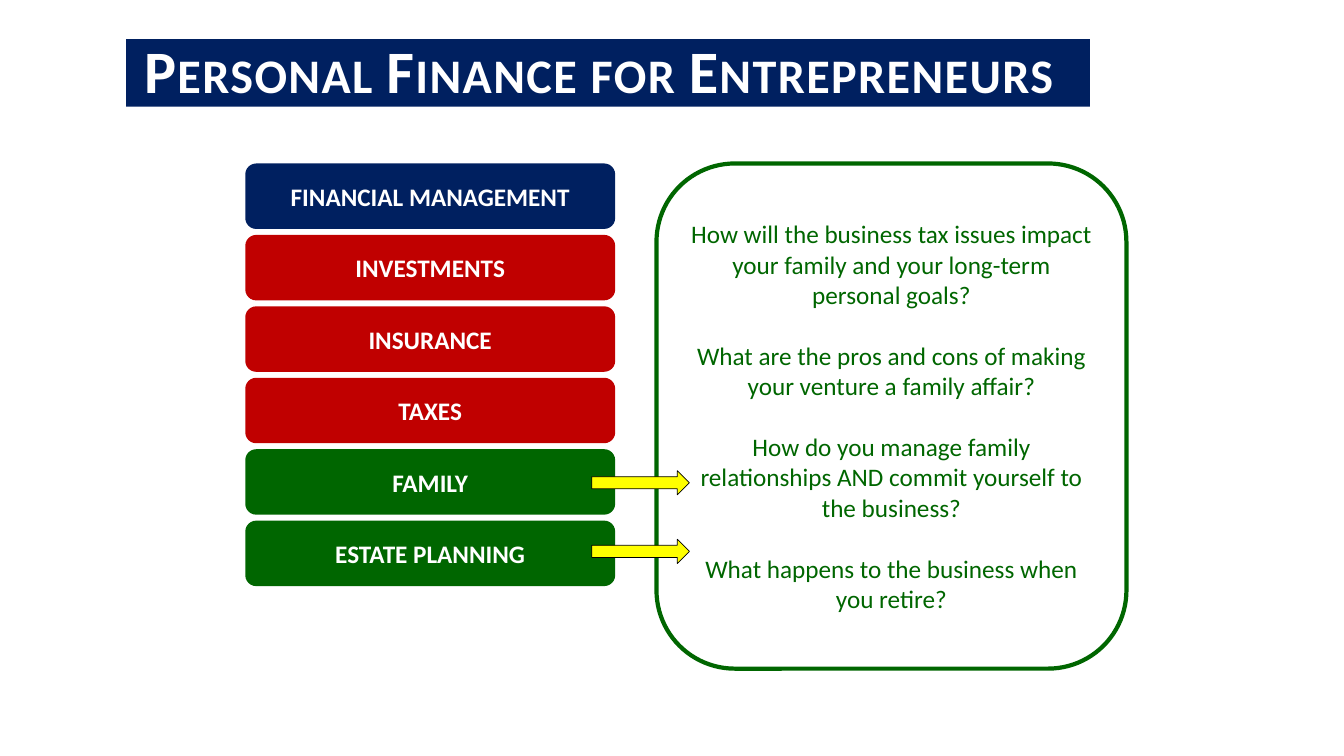
from pptx import Presentation
from pptx.dml.color import RGBColor
from pptx.enum.shapes import MSO_SHAPE
from pptx.enum.text import MSO_ANCHOR, PP_ALIGN
from pptx.util import Cm, Pt

COLORS = {"navy": "002060", "red": "C00000", "green": "006600",
          "yellow": "FFFF00", "white": "FFFFFF", "black": "000000"}

prs = Presentation()
prs.slide_width, prs.slide_height = Cm(33.86), Cm(19.05)
s = prs.slides.add_slide(prs.slide_layouts[6])


def add_box(kind, left, top, width, height, fill, line=None, line_width=1):
    """Add a flat filled shape, measured in cm, with an optional outline in points."""
    sp = s.shapes.add_shape(kind, Cm(left), Cm(top), Cm(width), Cm(height))
    sp.shadow.inherit = False
    sp.fill.solid()
    sp.fill.fore_color.rgb = RGBColor.from_string(COLORS[fill])
    if line:
        sp.line.color.rgb = RGBColor.from_string(COLORS[line])
        sp.line.width = Pt(line_width)
    else:
        sp.line.fill.background()
    sp.text_frame.word_wrap = True
    sp.text_frame.vertical_anchor = MSO_ANCHOR.MIDDLE
    return sp


def write(p, text, size, color, bold=False, align=PP_ALIGN.CENTER):
    p.text = text
    p.alignment = align
    p.font.name = "Calibri"
    p.font.size = Pt(size)
    p.font.bold = bold
    p.font.color.rgb = RGBColor.from_string(COLORS[color])


# Topics
topics = [("FINANCIAL MANAGEMENT", "navy"), ("INVESTMENTS", "red"),
          ("INSURANCE", "red"), ("TAXES", "red"),
          ("FAMILY", "green"), ("ESTATE PLANNING", "green")]
for i, (topic, color) in enumerate(topics):
    sp = add_box(MSO_SHAPE.ROUNDED_RECTANGLE, 6.18, 4.12 + 1.8 * i, 9.32, 1.65, color)
    write(sp.text_frame.paragraphs[0], topic, 18, "white", bold=True)

# Questions
questions = [
    "How will the business tax issues impact your family and your long-term personal goals?",
    "What are the pros and cons of making your venture a family affair?",
    "How do you manage family relationships AND commit yourself to the business?",
    "What happens to the business when you retire?",
]
panel = add_box(MSO_SHAPE.ROUNDED_RECTANGLE, 16.54, 4.12, 11.84, 12.73, "white", "green", 3)
tf = panel.text_frame
for i, question in enumerate(questions):
    p = tf.add_paragraph() if i else tf.paragraphs[0]
    write(p, question, 18, "green")
    if i:
        p.space_before = Pt(22)

# Arrows from the family topics to the questions
for top in (13.59, 11.86):
    add_box(MSO_SHAPE.RIGHT_ARROW, 14.91, top, 2.46, 0.61, "yellow", "black", 0.5)

# Title
title = add_box(MSO_SHAPE.RECTANGLE, 3.18, 0.99, 24.28, 1.7, "navy")
tf = title.text_frame
tf.vertical_anchor = MSO_ANCHOR.TOP
tf.margin_left, tf.margin_top = Cm(0.45), Cm(0.2)
tf.margin_right = tf.margin_bottom = 0
p = tf.paragraphs[0]
write(p, "Personal Finance for Entrepreneurs", 43, "white", bold=True, align=PP_ALIGN.LEFT)
p.line_spacing = 0.8
rPr = p.runs[0]._r.get_or_add_rPr()
rPr.set("cap", "small")
rPr.set("spc", "100")

prs.save("out.pptx")
